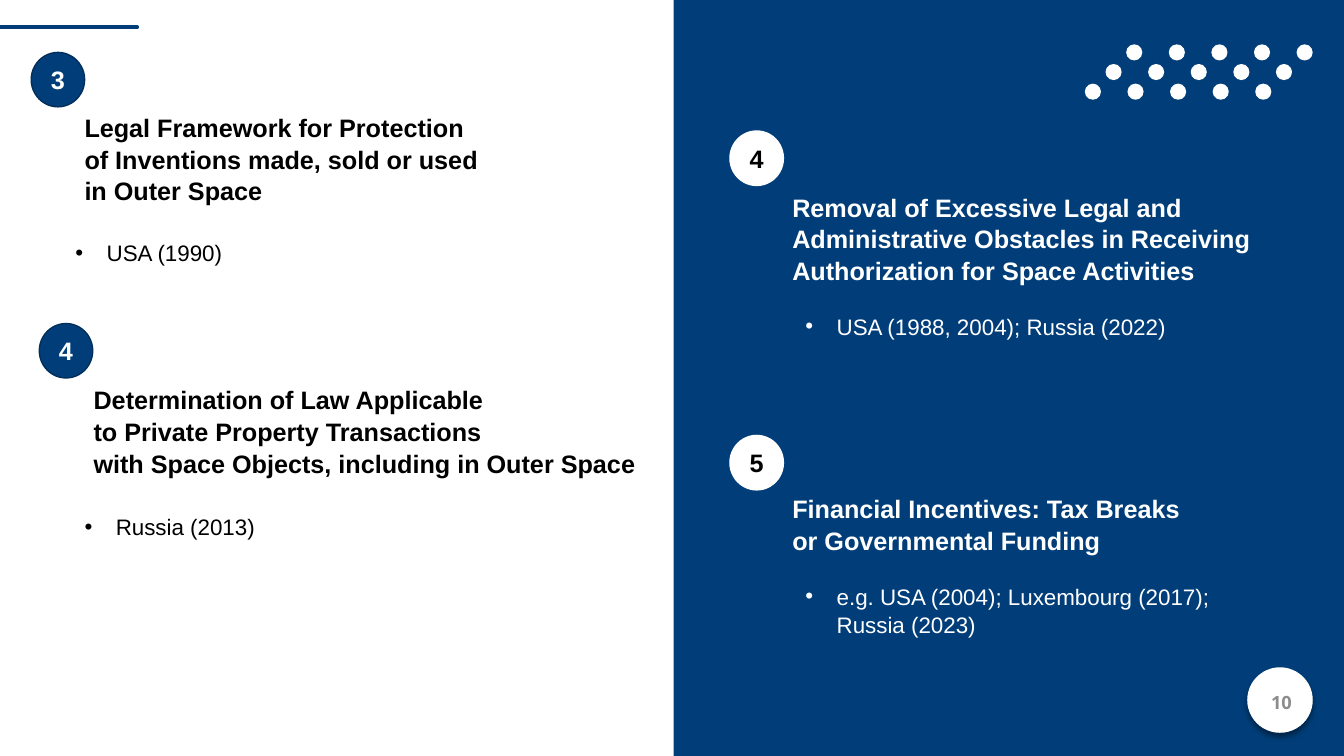
from dataclasses import dataclass

from lxml import etree
from pptx import Presentation
from pptx import util as u
from pptx.dml.color import RGBColor
from pptx.enum import shapes, text
from pptx.oxml import ns

NAVY, DARK_NAVY, WHITE, BLACK, GRAY = "013E79", "012E5A", "FFFFFF", "000000", "8C8C8C"
BADGE_WIDTH, BADGE_HEIGHT = 0.53, 0.54
DOT_SIZE, DOT_ROWS, DOT_COLUMNS = 0.16, 3, 5
BULLET_INDENT = 0.31


@dataclass
class Theme:
    badge: str
    badge_line: str
    number: str
    ink: str
    heading_width: float
    detail_width: float


@dataclass
class Topic:
    theme: Theme
    number: str
    badge_at: tuple[float, float]
    heading_at: tuple[float, float]
    heading: list[str]
    detail_at: tuple[float, float]
    details: list[str]


LEFT = Theme(NAVY, DARK_NAVY, WHITE, BLACK, 6.67, 5.54)
RIGHT = Theme(WHITE, WHITE, BLACK, WHITE, 5.36, 5.23)

TOPICS = [
    Topic(LEFT, "3", (0.31, 0.52), (0.74, 1.05),
          ["Legal Framework for Protection",
           "of Inventions made, sold or used",
           "in Outer Space"],
          (0.65, 2.31), ["USA (1990)"]),
    Topic(LEFT, "4", (0.39, 3.21), (0.83, 3.75),
          ["Determination of Law Applicable",
           "to Private Property Transactions",
           "with Space Objects, including in Outer Space"],
          (0.74, 5.03), ["Russia (2013)"]),
    Topic(RIGHT, "4", (7.24, 1.3), (7.76, 1.84),
          ["Removal of Excessive Legal and Administrative Obstacles "
           "in Receiving Authorization for Space Activities"],
          (7.89, 3.04), ["USA (1988, 2004); Russia (2022)"]),
    Topic(RIGHT, "5", (7.24, 4.32), (7.76, 4.83),
          ["Financial Incentives: Tax Breaks", "or Governmental Funding"],
          (7.89, 5.72), ["e.g. USA (2004); Luxembourg (2017);", "Russia (2023)"]),
]


def color(value: str) -> RGBColor:
    return RGBColor.from_string(value)


def add_figure(page, kind, left: float, top: float, width: float, height: float,
               fill: str, line: str | None = None):
    figure = page.shapes.add_shape(kind, u.Inches(left), u.Inches(top),
                                   u.Inches(width), u.Inches(height))
    figure.shadow.inherit = False
    figure.fill.solid()
    figure.fill.fore_color.rgb = color(fill)
    if line:
        figure.line.color.rgb = color(line)
        figure.line.width = u.Pt(1)
    else:
        figure.line.fill.background()
    return figure


def add_span(para, words: str, size: float, ink: str, bold: bool = False,
             font: str = "Arial") -> None:
    span = para.add_run()
    span.text = words
    span.font.name = font
    span.font.size = u.Pt(size)
    span.font.bold = bold
    span.font.color.rgb = color(ink)


def add_lines(page, at: tuple[float, float], width: float, lines: list[str],
              size: float, ink: str, bold: bool = False) -> list:
    """Add a text box with one paragraph per line and return the paragraphs."""
    line_height = size / 72 * 1.2
    box = page.shapes.add_textbox(u.Inches(at[0]), u.Inches(at[1]), u.Inches(width),
                                  u.Inches(0.1 + line_height * len(lines)))
    frame = box.text_frame
    frame.word_wrap = True
    paras = [frame.paragraphs[0]] + [frame.add_paragraph() for _ in lines[1:]]
    for para, words in zip(paras, lines):
        para.line_spacing = 1.05
        add_span(para, words, size, ink, bold)
    return paras


def indent(para, bulleted: bool) -> None:
    properties = para._p.get_or_add_pPr()
    properties.set("marL", str(u.Inches(BULLET_INDENT)))
    properties.set("indent", str(-u.Inches(BULLET_INDENT) if bulleted else 0))
    if bulleted:
        font = etree.SubElement(properties, ns.qn("a:buFont"))
        font.set("typeface", "Arial")
        etree.SubElement(properties, ns.qn("a:buChar")).set("char", "•")


def center(frame) -> None:
    frame.vertical_anchor = text.MSO_ANCHOR.MIDDLE
    frame.paragraphs[0].alignment = text.PP_ALIGN.CENTER


def add_topic(page, topic: Topic) -> None:
    theme = topic.theme
    badge = add_figure(page, shapes.MSO_SHAPE.OVAL, *topic.badge_at,
                       BADGE_WIDTH, BADGE_HEIGHT, theme.badge, theme.badge_line)
    center(badge.text_frame)
    add_span(badge.text_frame.paragraphs[0], topic.number, 18, theme.number, True)
    add_lines(page, topic.heading_at, theme.heading_width, topic.heading,
              18, theme.ink, True)
    details = add_lines(page, topic.detail_at, theme.detail_width, topic.details,
                        16, theme.ink)
    for index, para in enumerate(details):
        indent(para, bulleted=index == 0)


def add_dots(page) -> None:
    """Draw the slanted dot pattern, each row shifted right of the one below."""
    for row in range(DOT_ROWS):
        for column in range(DOT_COLUMNS):
            left = 10.76 + 1.69 / 4 * column + 0.41 / 2 * row
            top = 0.83 - 0.39 / 2 * row
            add_figure(page, shapes.MSO_SHAPE.OVAL, left, top, DOT_SIZE, DOT_SIZE, WHITE)


def add_accent_line(page) -> None:
    accent = page.shapes.add_connector(shapes.MSO_CONNECTOR.STRAIGHT, u.Inches(0),
                                       u.Inches(0.27), u.Inches(1.36), u.Inches(0.27))
    accent.line.color.rgb = color(NAVY)
    accent.line.width = u.Pt(2.83)
    accent.line._get_or_add_ln().set("cap", "rnd")
    etree.SubElement(accent._element.spPr, ns.qn("a:effectLst"))


def add_page_number(page, number: str) -> None:
    disc = add_figure(page, shapes.MSO_SHAPE.OVAL, 12.37, 6.62, 0.65, 0.65, WHITE)
    effects = disc._element.spPr.find(ns.qn("a:effectLst"))
    shadow = etree.SubElement(effects, ns.qn("a:outerShdw"), blurRad=str(u.Pt(4)),
                              dist=str(u.Pt(3)), dir="5400000", rotWithShape="0")
    shade = etree.SubElement(shadow, ns.qn("a:srgbClr"), val=BLACK)
    etree.SubElement(shade, ns.qn("a:alpha"), val="40000")
    box = page.shapes.add_textbox(u.Inches(12.34), u.Inches(6.77),
                                  u.Inches(0.74), u.Inches(0.4))
    box.text_frame.word_wrap = True
    center(box.text_frame)
    add_span(box.text_frame.paragraphs[0], number, 13, GRAY, True, "Open Sans")


def main() -> None:
    deck = Presentation()
    deck.slide_width, deck.slide_height = u.Inches(13.33), u.Inches(7.5)
    page = deck.slides.add_slide(deck.slide_layouts[6])
    add_figure(page, shapes.MSO_SHAPE.RECTANGLE, 6.68, 0, 6.65, 7.5, NAVY)
    add_dots(page)
    add_accent_line(page)
    add_page_number(page, "10")
    for topic in TOPICS:
        add_topic(page, topic)
    deck.save("out.pptx")


if __name__ == "__main__":
    main()
